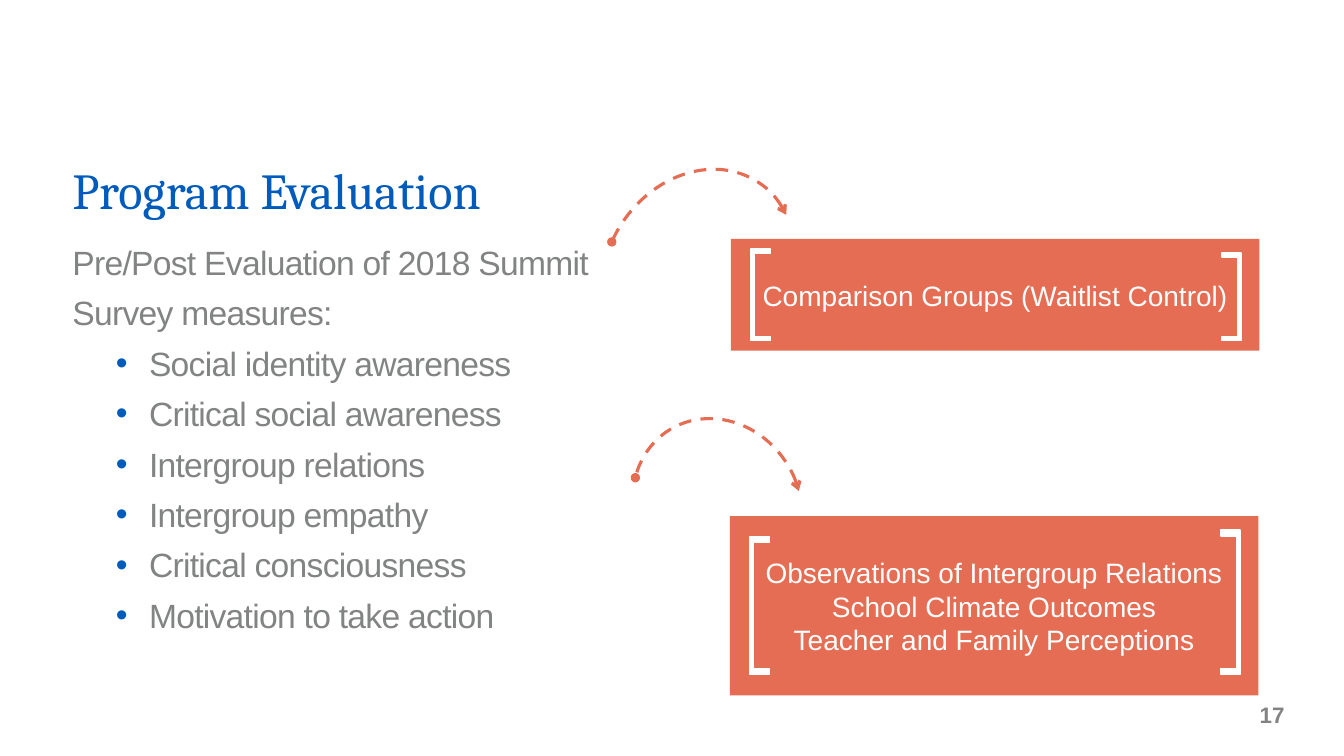
from lxml.etree import SubElement
from pptx import Presentation
from pptx.dml.color import RGBColor
from pptx.enum.dml import MSO_LINE
from pptx.enum.shapes import MSO_SHAPE
from pptx.enum.text import MSO_ANCHOR, PP_ALIGN
from pptx.oxml.ns import qn
from pptx.util import Inches, Pt

WHITE = RGBColor(0xFF, 0xFF, 0xFF)
GRAY = RGBColor(0x82, 0x83, 0x83)
BLUE = RGBColor(0x00, 0x5B, 0xBB)
CORAL = RGBColor(0xE5, 0x6D, 0x54)

INTRO = ["Pre/Post Evaluation of 2018 Summit", "Survey measures:"]
MEASURES = [
    "Social identity awareness",
    "Critical social awareness",
    "Intergroup relations",
    "Intergroup empathy",
    "Critical consciousness",
    "Motivation to take action",
]


def add_text_box(page, left, top, width, height, anchor):
    box = page.shapes.add_textbox(Inches(left), Inches(top), Inches(width), Inches(height))
    frame = box.text_frame
    frame.word_wrap = True
    frame.vertical_anchor = anchor
    return frame


def style_font(para, size, color, name="Arial"):
    para.font.name = name
    para.font.size = Pt(size)
    para.font.color.rgb = color


def add_title(page, left, top, width, height):
    para = add_text_box(page, left, top, width, height, MSO_ANCHOR.BOTTOM).paragraphs[0]
    para.text = "Program Evaluation"
    para.line_spacing = 0.8
    style_font(para, 36, BLUE, "Cambria")


def add_bullet(para):
    props = para._p.get_or_add_pPr()
    props.set("marL", str(Inches(0.76)))
    props.set("indent", str(Inches(-0.33)))
    color = SubElement(props, qn("a:buClr"))
    SubElement(color, qn("a:srgbClr")).set("val", str(BLUE))
    SubElement(props, qn("a:buFont")).set("typeface", "Arial")
    SubElement(props, qn("a:buChar")).set("char", "•")


def add_body(page, left, top, width, height):
    frame = add_text_box(page, left, top, width, height, MSO_ANCHOR.TOP)
    for index, text in enumerate(INTRO + MEASURES):
        para = frame.add_paragraph() if index else frame.paragraphs[0]
        para.text = text
        if text in MEASURES:
            add_bullet(para)
        para.line_spacing = Pt(26)
        if index:
            para.space_before = Pt(10)
        style_font(para, 24, GRAY)
        para.font._element.set("spc", "-50")


def add_bracket(page, spine, top, depth, height, arm, stem):
    """Draw a square bracket; a negative depth and stem open it to the left."""
    tip, inner, bottom = spine + depth, spine + stem, top + height
    points = [
        (tip, top), (spine, top), (spine, bottom), (tip, bottom),
        (tip, bottom - arm), (inner, bottom - arm), (inner, top + arm), (tip, top + arm),
    ]
    corners = [(Inches(x), Inches(y)) for x, y in points]
    builder = page.shapes.build_freeform(*corners[0])
    builder.add_line_segments(corners[1:], close=True)
    bracket = builder.convert_to_shape()
    bracket.shadow.inherit = False
    bracket.fill.solid()
    bracket.fill.fore_color.rgb = WHITE
    bracket.line.color.rgb = WHITE
    bracket.line.width = Pt(1)


def add_callout(page, left, top, width, height, lines, left_inset, right_inset, arm):
    """Draw a filled panel; each inset is the top and bottom gap of one bracket."""
    panel = page.shapes.add_shape(
        MSO_SHAPE.RECTANGLE, Inches(left), Inches(top), Inches(width), Inches(height))
    panel.shadow.inherit = False
    panel.fill.solid()
    panel.fill.fore_color.rgb = CORAL
    panel.line.fill.background()
    frame = panel.text_frame
    frame.word_wrap = True
    frame.vertical_anchor = MSO_ANCHOR.MIDDLE
    for index, text in enumerate(lines):
        para = frame.add_paragraph() if index else frame.paragraphs[0]
        para.text = text
        para.alignment = PP_ALIGN.CENTER
        style_font(para, 20, WHITE)

    sides = [(left + 0.2, 1, left_inset), (left + width - 0.18, -1, right_inset)]
    for spine, direction, (above, below) in sides:
        add_bracket(page, spine, top + above, 0.19 * direction,
                    height - above - below, arm, 0.03 * direction)


def add_dashed_arc(page, left, top, width, height, rotation, start, end):
    arc = page.shapes.add_shape(
        MSO_SHAPE.ARC, Inches(left), Inches(top), Inches(width), Inches(height))
    arc.shadow.inherit = False
    arc.adjustments[0] = start
    arc.adjustments[1] = end
    arc.rotation = rotation
    arc._element.spPr.xfrm.set("flipV", "1")
    arc.fill.background()
    arc.line.color.rgb = CORAL
    arc.line.width = Pt(2.25)
    arc.line.dash_style = MSO_LINE.DASH
    line = arc.line._get_or_add_ln()
    SubElement(line, qn("a:headEnd")).set("type", "arrow")
    SubElement(line, qn("a:tailEnd")).set("type", "oval")


def add_page_number(page, left, top, width, height):
    frame = add_text_box(page, left, top, width, height, MSO_ANCHOR.MIDDLE)
    frame.margin_left = frame.margin_right = Inches(0.13)
    para = frame.paragraphs[0]
    para.text = "17"
    para.alignment = PP_ALIGN.RIGHT
    style_font(para, 16, GRAY)
    para.font.bold = True


def main():
    deck = Presentation()
    deck.slide_width = Inches(13.33)
    deck.slide_height = Inches(7.5)
    page = deck.slides.add_slide(deck.slide_layouts[6])

    add_page_number(page, 12.08, 6.8, 0.79, 0.58)
    add_body(page, 0.62, 2.39, 5.64, 4.15)
    add_title(page, 0.62, 1.44, 11.5, 0.78)
    add_dashed_arc(page, 6.02, 1.63, 1.81, 2.16, 213.3, 148.11, 8.07)
    add_callout(page, 7.25, 2.37, 5.24, 1.11, ["Comparison Groups (Waitlist Control)"],
                (0.1, 0.1), (0.14, 0.1), 0.04)
    add_dashed_arc(page, 6.21, 4.22, 1.81, 1.63, 238.8, 150.11, 23.34)
    add_callout(page, 7.24, 5.12, 5.24, 1.78,
                ["Observations of Intergroup Relations", "School Climate Outcomes",
                 "Teacher and Family Perceptions"],
                (0.2, 0.21), (0.14, 0.21), 0.06)
    deck.save("out.pptx")


if __name__ == "__main__":
    main()
